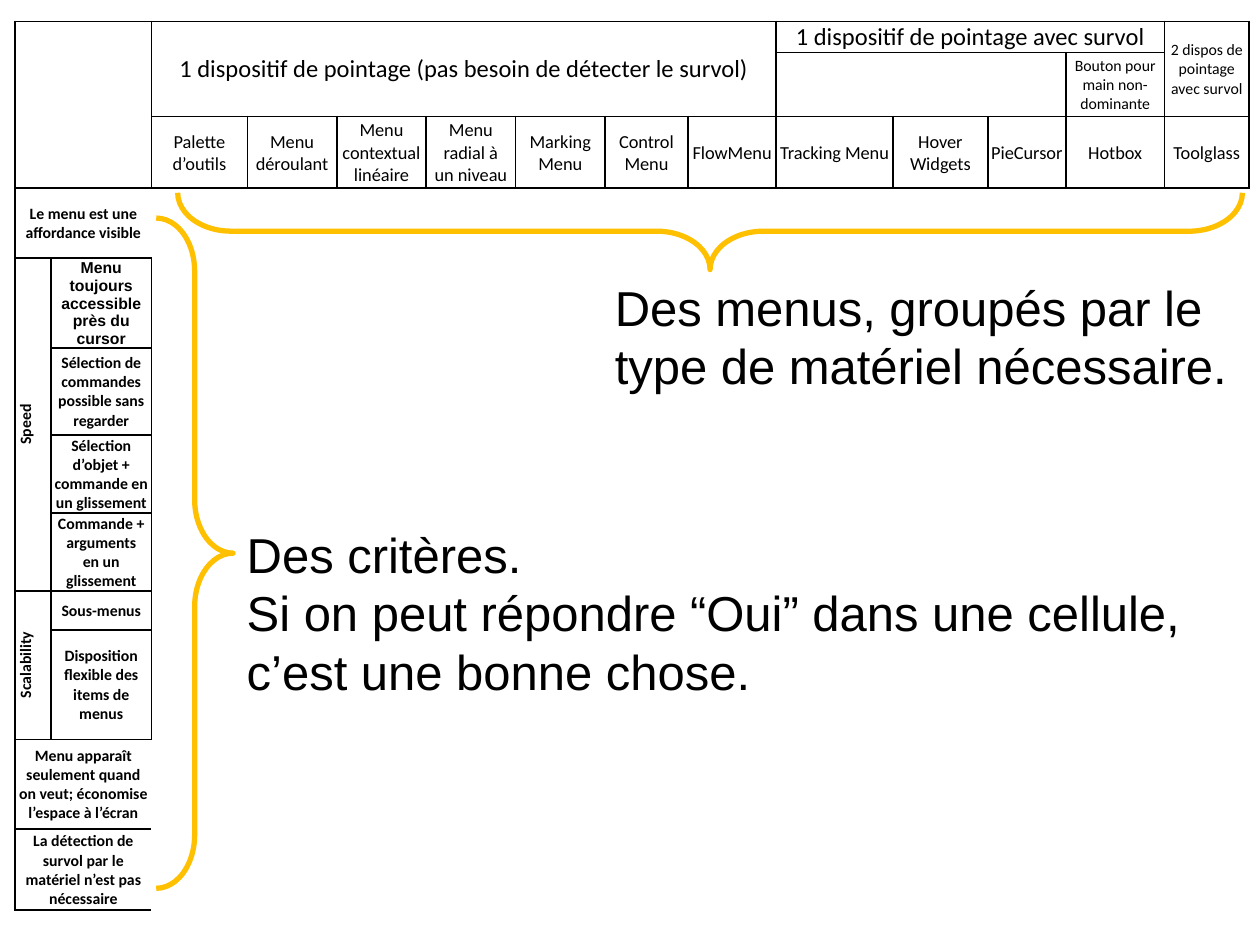
from lxml import etree
from pptx import Presentation
from pptx.dml.color import RGBColor
from pptx.enum.shapes import MSO_SHAPE as SHAPE
from pptx.enum.text import MSO_ANCHOR as ANCHOR, MSO_AUTO_SIZE as AUTO, PP_ALIGN as ALIGN
from pptx.oxml.ns import qn
from pptx.util import Pt

NO_STYLE = "{2D5ABB26-0587-4C30-8999-92F81FD0307C}"
COLS = [20.5, 57.5, 54.8, 51.1, 51.1, 51.1, 51.1, 47.5, 50.4, 66.7, 54.2, 44.6, 56.3, 48.5]
ROWS = [17.8, 36.6, 41, 40, 51.3, 49.7, 44.6, 44.2, 22.4, 62.5, 51.4, 46.3]

HEAD = dict(size=9)
MENU = dict(size=10.5)
CRITERION = dict(size=9, bold=True)

# row, column, rows spanned, columns spanned, text, format
GROUPS = [
    (0, 0, 3, 2, "", HEAD),
    (0, 2, 2, 7, "1 dispositif de pointage (pas besoin de détecter le survol)", dict(size=14)),
    (0, 9, 1, 4, "1 dispositif de pointage avec survol", dict(size=14)),
    (0, 13, 2, 1, "2 dispos de pointage avec survol", HEAD),
    (1, 9, 1, 3, "", HEAD),
    (1, 12, 1, 1, "Bouton pour main non-dominante", HEAD),
    (3, 0, 1, 2, "Le menu est une affordance visible", CRITERION),
    (4, 0, 4, 1, "Speed", dict(CRITERION, vert="vert270")),
    (4, 1, 1, 1, "Menu toujours accessible près du cursor", dict(CRITERION, font="Arial")),
    (8, 0, 2, 1, "Scalability", dict(CRITERION, vert="vert270")),
    (10, 0, 1, 2, "Menu apparaît seulement quand on veut; économise l’espace à l’écran",
     dict(CRITERION, fill="FFFFFF")),
    (11, 0, 1, 2, "La détection de survol par le matériel n’est pas nécessaire", CRITERION),
]
MENUS = ["Palette d’outils", "Menu déroulant", "Menu contextual linéaire",
         "Menu radial à\nun niveau", "Marking Menu", "Control Menu", "FlowMenu",
         "Tracking Menu", "Hover Widgets", "PieCursor", "Hotbox", "Toolglass"]
CRITERIA = ["Sélection de commandes possible sans regarder",
            "Sélection d’objet + commande en un glissement",
            "Commande + arguments\ven un glissement",
            "Sous-menus",
            "Disposition flexible des items de menus"]


def rgb(color):
    return RGBColor.from_string(color)


def write(tf, text, font="Calibri", size=9, bold=False, color="000000", align=ALIGN.LEFT):
    tf.text = text
    for p in tf.paragraphs:
        p.alignment = align
        for r in p.runs:
            r.font.name, r.font.size, r.font.bold = font, Pt(size), bold
            r.font.color.rgb = rgb(color)


class Deck:
    ink = "000000"
    accent = "FFC000"

    def __init__(self):
        self.prs = Presentation()
        self.prs.slide_width, self.prs.slide_height = Pt(720), Pt(540)
        self.s = self.prs.slides.add_slide(self.prs.slide_layouts[6])

    def table(self, x, y, cols, rows):
        """Add a plain table whose empty cells do not stretch their rows."""
        frame = self.s.shapes.add_table(len(rows), len(cols), Pt(x), Pt(y),
                                        Pt(sum(cols)), Pt(sum(rows)))
        tbl = frame.table
        tbl.first_row = tbl.horz_banding = False
        frame._element.find(".//" + qn("a:tableStyleId")).text = NO_STYLE
        for line, sizes in ((tbl.columns, cols), (tbl.rows, rows)):
            for item, size in zip(line, sizes):
                if line is tbl.columns:
                    item.width = Pt(size)
                else:
                    item.height = Pt(size)
        for cell in tbl.iter_cells():
            cell.margin_left = cell.margin_right = cell.margin_top = Pt(0.7)
            cell.margin_bottom = 0
            cell.vertical_anchor = ANCHOR.MIDDLE
            cell.fill.background()
            cell.text_frame.paragraphs[0]._p.get_or_add_endParaRPr().set("sz", "900")
        return tbl

    def cell(self, tbl, row, col, height, width, text, fill=None, vert=None, **fmt):
        """Fill one cell, merged over height by width, and frame it."""
        cell = tbl.cell(row, col)
        bottom, right = row + height - 1, col + width - 1
        if height * width > 1:
            cell.merge(tbl.cell(bottom, right))
        if text:
            write(cell.text_frame, text, align=ALIGN.CENTER, **fmt)
        if fill:
            cell.fill.solid()
            cell.fill.fore_color.rgb = rgb(fill)
        if vert:
            cell._tc.get_or_add_tcPr().set("vert", vert)
        for i in range(row, bottom + 1):
            for j in range(col, right + 1):
                edges = dict(L=j == col, R=j == right, T=i == row, B=i == bottom)
                self.border(tbl.cell(i, j), [side for side, on in edges.items() if on])

    def border(self, cell, sides):
        tcPr = cell._tc.get_or_add_tcPr()
        for n, side in enumerate(sides):
            ln = etree.Element(qn("a:ln" + side), w=str(Pt(1)))
            fill = etree.SubElement(ln, qn("a:solidFill"))
            etree.SubElement(fill, qn("a:srgbClr"), val=self.ink)
            tcPr.insert(n, ln)

    def brace(self, x, y, w, h, rotation=0):
        sp = self.s.shapes.add_shape(SHAPE.RIGHT_BRACE, Pt(x), Pt(y), Pt(w), Pt(h))
        sp.adjustments[0], sp.adjustments[1] = 0.695, 0.5
        sp.rotation = rotation
        sp.shadow.inherit = False
        sp.fill.background()
        sp.line.color.rgb = rgb(self.accent)
        sp.line.width = Pt(3)

    def text(self, x, y, w, h, text, **fmt):
        tf = self.s.shapes.add_textbox(Pt(x), Pt(y), Pt(w), Pt(h)).text_frame
        tf.word_wrap = True
        tf.auto_size = AUTO.SHAPE_TO_FIT_TEXT
        write(tf, text, **fmt)


def main():
    deck = Deck()
    tbl = deck.table(8.6, 12.2, COLS, ROWS)
    for row, col, height, width, text, fmt in GROUPS:
        deck.cell(tbl, row, col, height, width, text, **fmt)
    for col, text in enumerate(MENUS, 2):
        deck.cell(tbl, 2, col, 1, 1, text, **MENU)
    for row, text in enumerate(CRITERIA, 5):
        deck.cell(tbl, row, 1, 1, 1, text, **CRITERION)

    deck.brace(89.3, 124.6, 43.9, 383)
    deck.brace(383.8, -172.1, 43.9, 608.4, rotation=90)
    note = dict(font="Arial", size=28)
    deck.text(344.2, 154.8, 366.5, 75, "Des menus, groupés par le type de matériel nécessaire.", **note)
    deck.text(133.9, 295.9, 567.4, 109,
              "Des critères.\vSi on peut répondre “Oui” dans une cellule, c’est une bonne chose.",
              **note)
    deck.prs.save("out.pptx")


if __name__ == "__main__":
    main()
